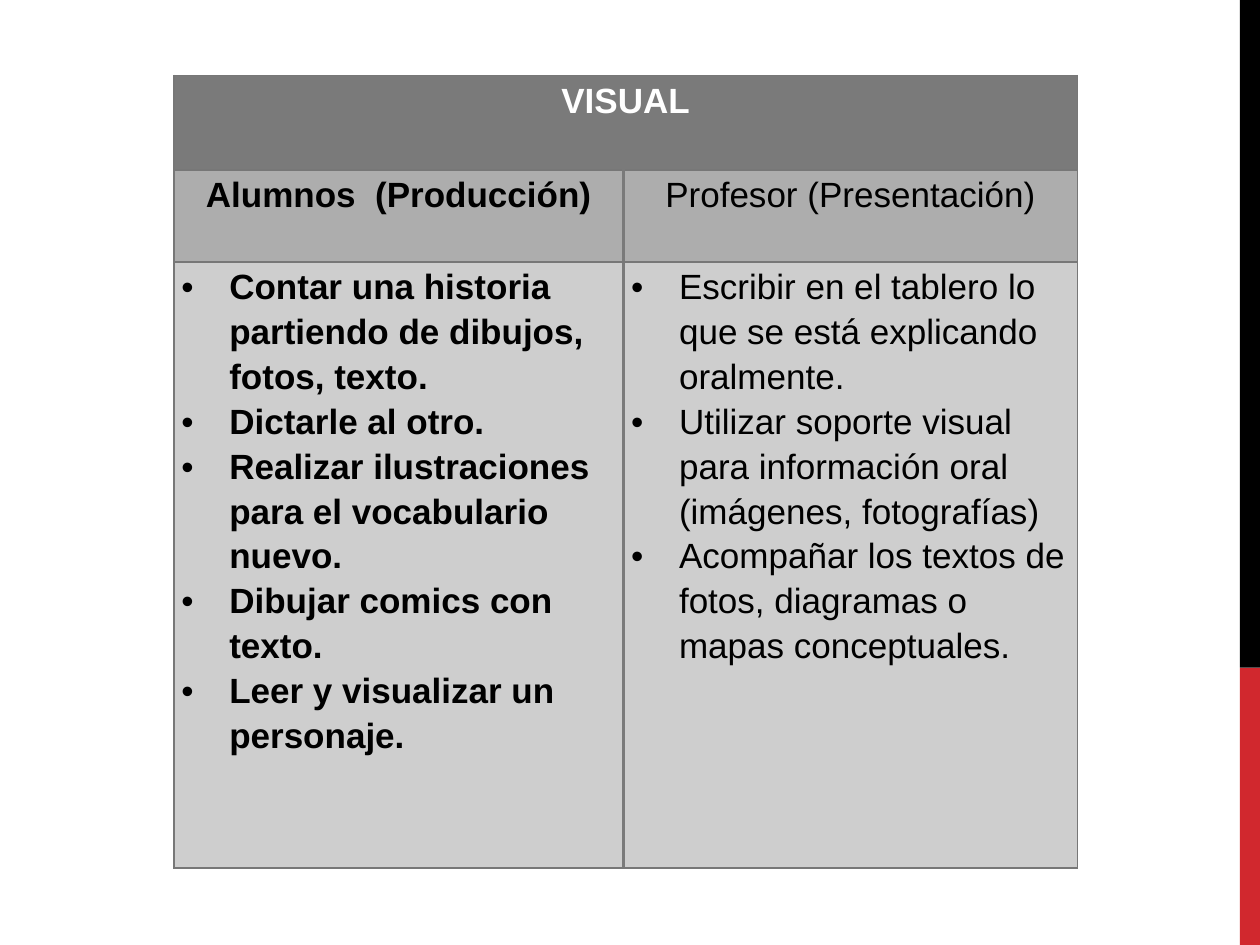
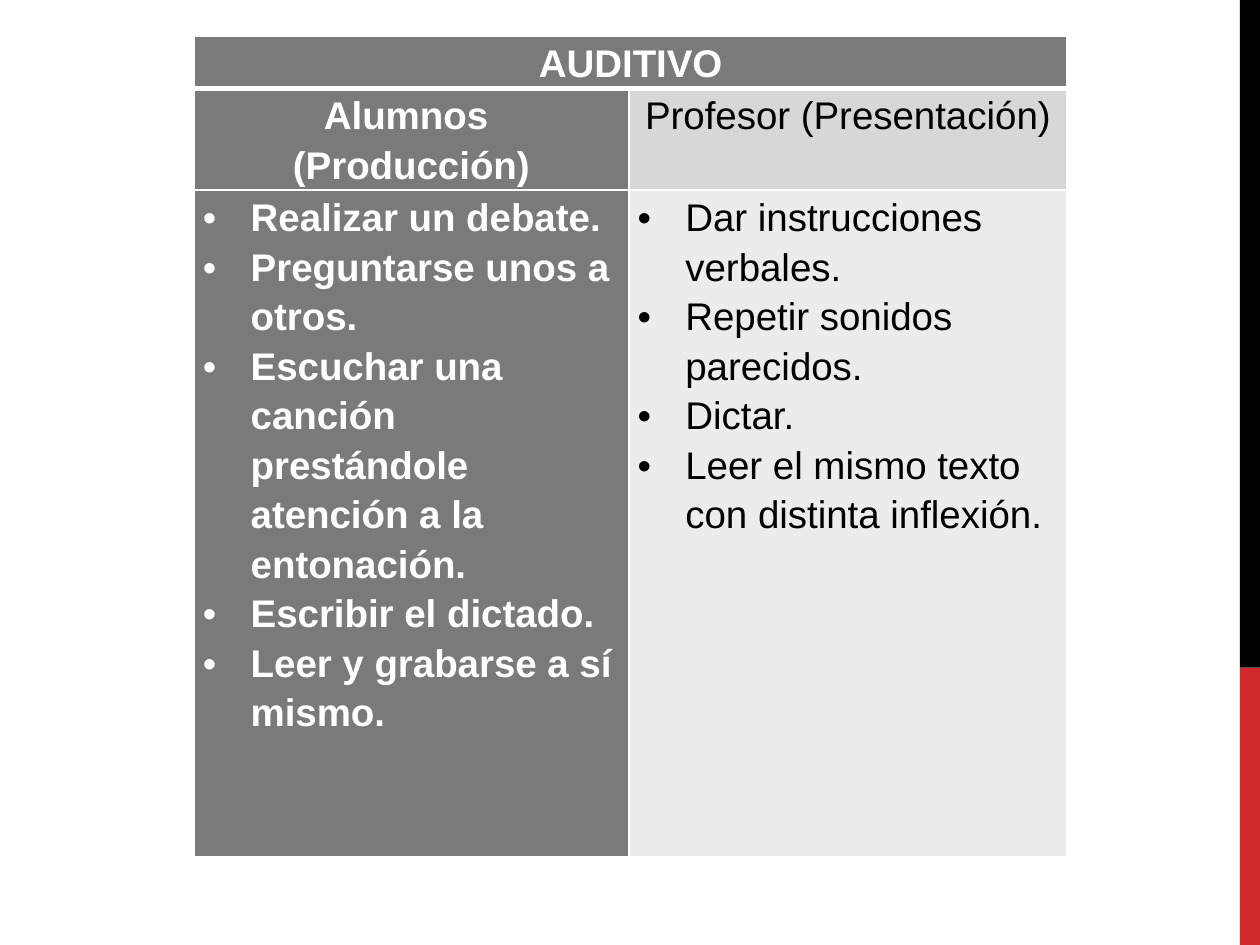
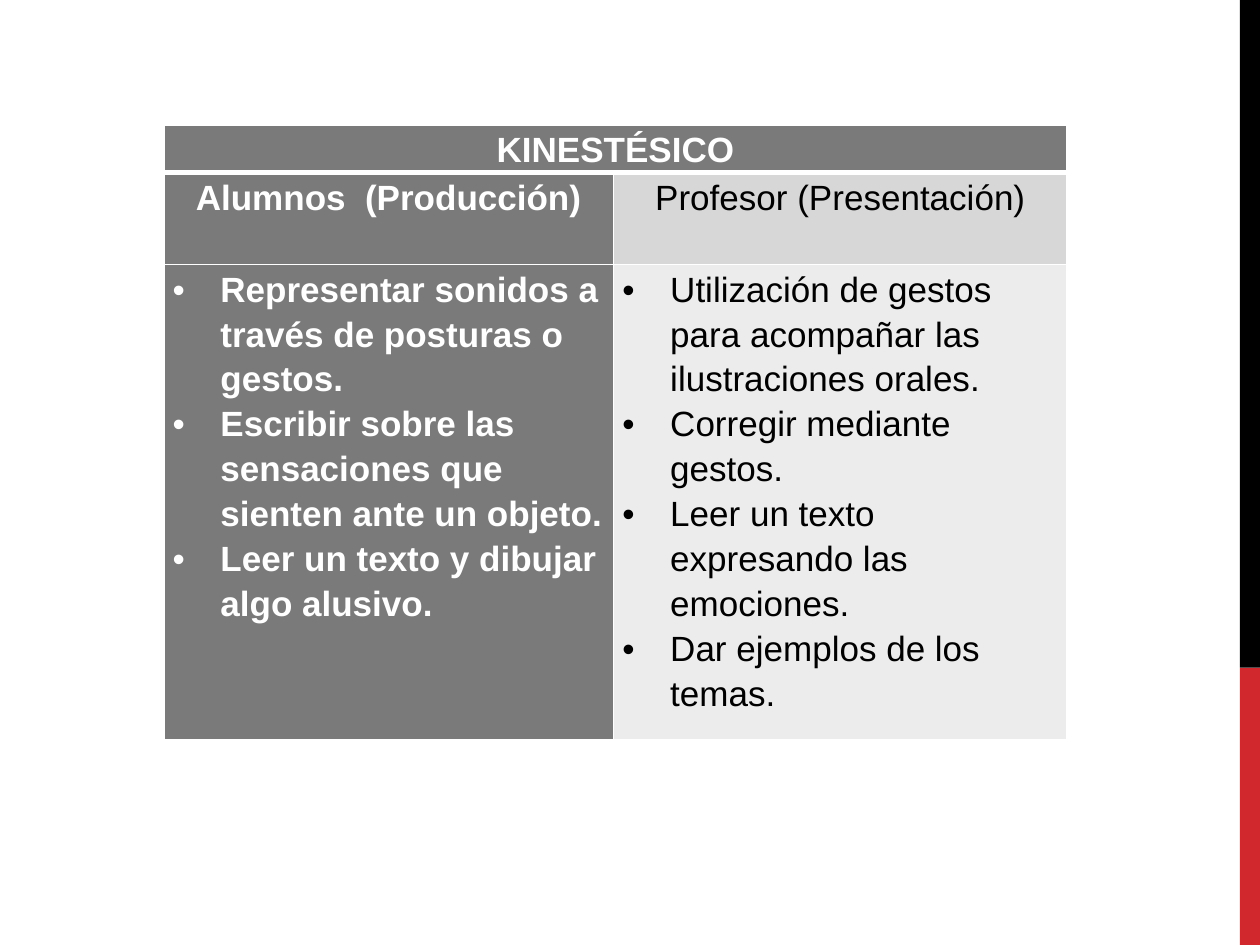
from lxml import etree
from pptx import Presentation
from pptx import util as u
from pptx.dml.color import RGBColor
from pptx.enum import shapes, text
from pptx.oxml.ns import qn

HUES = {"red": "D1282E", "black": "000000", "white": "FFFFFF", "dark": "7A7A7A",
        "rule": "777777", "mid": "ADADAD", "soft": "CECECE", "light": "D7D7D7",
        "pale": "ECECEC"}
BANDS = [("red", 5.3, 2.2), ("black", 0, 5.3)]
HEADS = ["Alumnos  (Producción)", "Profesor (Presentación)"]

# Fills and inks run by row, each with the left and the right cell.
GRAY = {"fills": [("dark", "dark"), ("mid", "mid"), ("soft", "soft")],
        "inks": [("white", "white"), ("black", "black"), ("black", "black")],
        "line": "rule", "split": ("dark", 2.25), "under": ("rule", 1), "inset": 0.06}
DARK = {"fills": [("dark", "dark"), ("dark", "light"), ("dark", "pale")],
        "inks": [("white", "white"), ("white", "black"), ("white", "black")],
        "line": "white", "split": ("white", 1), "under": ("white", 3), "inset": 0.07}

TABLES = [
    {"title": "VISUAL", "look": GRAY, "size": 20, "at": (1.38, 0.6),
     "cols": (3.57, 3.6), "rows": (0.75, 0.73, 4.81),
     "lists": [
         ["Contar una historia partiendo de dibujos, fotos, texto.",
          "Dictarle al otro.",
          "Realizar ilustraciones para el vocabulario nuevo.",
          "Dibujar comics con texto.",
          "Leer y visualizar un personaje."],
         ["Escribir en el tablero lo que se está explicando oralmente.",
          "Utilizar soporte visual para información oral (imágenes, fotografías)",
          "Acompañar los textos de fotos, diagramas o mapas conceptuales."]]},
    {"title": "AUDITIVO", "look": DARK, "size": 22, "at": (1.54, 0.29),
     "cols": (3.45, 3.48), "rows": (0.41, 0.81, 5.29),
     "lists": [
         ["Realizar un debate.",
          "Preguntarse unos a otros.",
          "Escuchar una canción prestándole atención a la entonación.",
          "Escribir el dictado.",
          "Leer y grabarse a sí mismo."],
         ["Dar instrucciones verbales.",
          "Repetir sonidos parecidos.",
          "Dictar.",
          "Leer el mismo texto con distinta inflexión."]]},
    {"title": "KINESTÉSICO", "look": DARK, "size": 20, "at": (1.3, 0.99),
     "cols": (3.57, 3.6), "rows": (0.38, 0.73, 3.77),
     "lists": [
         ["Representar sonidos a través de posturas o gestos.",
          "Escribir sobre las sensaciones que sienten ante un objeto.",
          "Leer un texto y dibujar algo alusivo."],
         ["Utilización de gestos para acompañar las ilustraciones orales.",
          "Corregir mediante gestos.",
          "Leer un texto expresando las emociones.",
          "Dar ejemplos de los temas."]]},
]


def edge(cell, side, hue, width):
    """Draw one border of a cell; side is L, R, T or B, in that order."""
    line = etree.SubElement(cell._tc.get_or_add_tcPr(), qn(f"a:ln{side}"),
                            w=str(u.Pt(width)))
    fill = etree.SubElement(line, qn("a:solidFill"))
    etree.SubElement(fill, qn("a:srgbClr"), val=HUES[hue])


def bullet(para):
    props = para._p.get_or_add_pPr()
    props.set("marL", str(u.Inches(0.38)))
    props.set("indent", str(u.Inches(-0.38)))
    etree.SubElement(props, qn("a:buFont"), typeface="Arial")
    etree.SubElement(props, qn("a:buChar"), char="•")


prs = Presentation()
prs.slide_width, prs.slide_height = u.Inches(10), u.Inches(7.5)

for data in TABLES:
    slide = prs.slides.add_slide(prs.slide_layouts[6])
    for hue, top, high in BANDS:
        band = slide.shapes.add_shape(shapes.MSO_SHAPE.RECTANGLE, u.Inches(9.84),
                                      u.Inches(top), u.Inches(0.16), u.Inches(high))
        band.shadow.inherit = False
        band.fill.solid()
        band.fill.fore_color.rgb = RGBColor.from_string(HUES[hue])
        band.line.fill.background()

    look, cols, rows = data["look"], data["cols"], data["rows"]
    left, top = data["at"]
    table = slide.shapes.add_table(3, 2, u.Inches(left), u.Inches(top),
                                   u.Inches(sum(cols)), u.Inches(sum(rows))).table
    table.first_row = table.horz_banding = False
    for col, wide in zip(table.columns, cols):
        col.width = u.Inches(wide)
    for row, high in zip(table.rows, rows):
        row.height = u.Inches(high)
    table.cell(0, 0).merge(table.cell(0, 1))

    words = [[[data["title"]], []], [[head] for head in HEADS], data["lists"]]
    for r in range(3):
        for c in range(2):
            cell = table.cell(r, c)
            plain = (look["line"], 1)
            edge(cell, "L", *(look["split"] if r and c else plain))
            edge(cell, "R", *(look["split"] if r and not c else plain))
            edge(cell, "T", *(look["under"] if r == 1 else plain))
            edge(cell, "B", *(look["under"] if r == 0 else plain))
            cell.fill.solid()
            cell.fill.fore_color.rgb = RGBColor.from_string(HUES[look["fills"][r][c]])
            cell.margin_left = cell.margin_right = u.Inches(look["inset"])
            cell.margin_top = cell.margin_bottom = 0
            if not words[r][c]:
                continue
            cell.text = "\n".join(words[r][c])
            for para in cell.text_frame.paragraphs:
                para.line_spacing = 1.15
                if r == 2:
                    bullet(para)
                else:
                    para.alignment = text.PP_ALIGN.CENTER
                font = para.font
                font.name, font.size = "Arial", u.Pt(data["size"])
                font.bold = c == 0
                font.color.rgb = RGBColor.from_string(HUES[look["inks"][r][c]])

prs.save("out.pptx")
